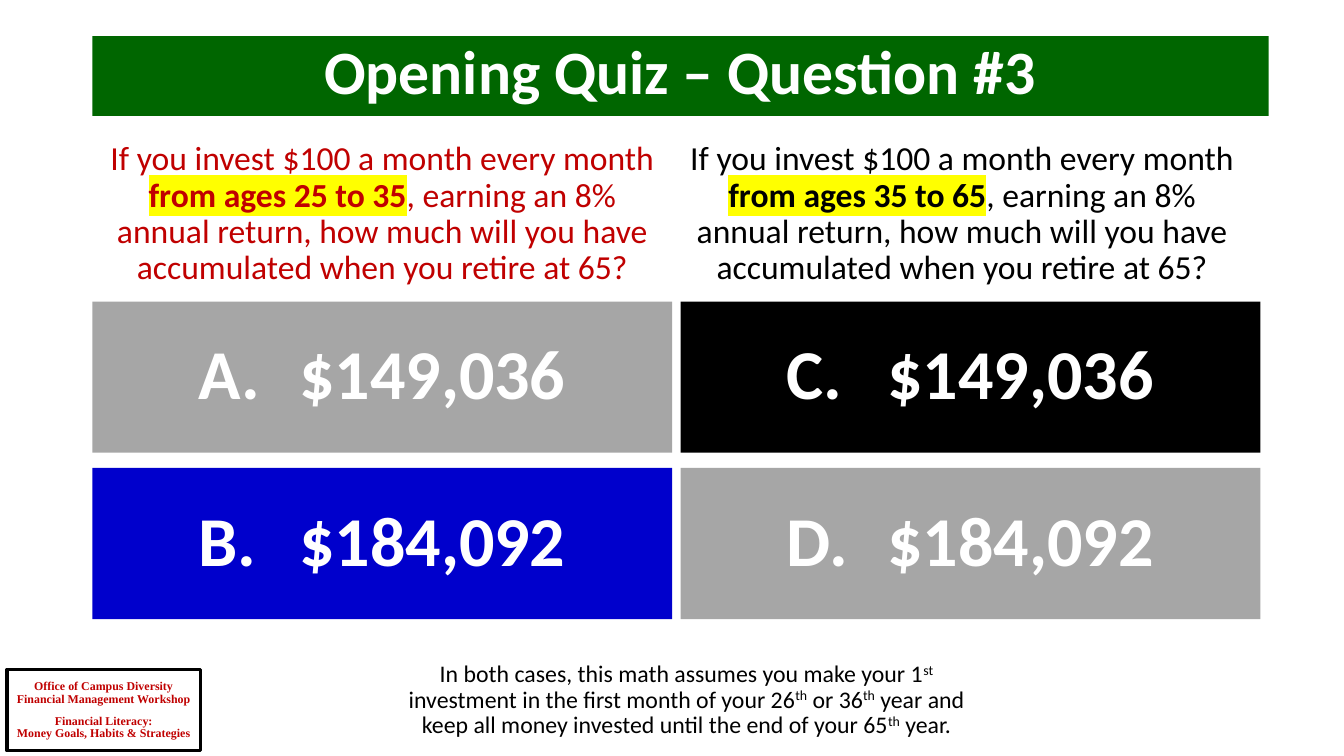
"""Build a quiz slide that compares early and late investing."""
from dataclasses import dataclass

from lxml import etree
from pptx import Presentation
from pptx.dml.color import RGBColor
from pptx.enum.shapes import MSO_SHAPE
from pptx.enum.text import MSO_ANCHOR, PP_ALIGN
from pptx.oxml.ns import qn
from pptx.util import Inches, Pt

RECTANGLE = MSO_SHAPE.RECTANGLE
CENTER = PP_ALIGN.CENTER
TOP, MIDDLE = MSO_ANCHOR.TOP, MSO_ANCHOR.MIDDLE
UNITS_PER_INCH = 12


@dataclass(frozen=True)
class Theme:
    """Colours, fonts and type sizes of the slide."""
    green: str = "006600"
    red: str = "C00000"
    blue: str = "0000CC"
    gray: str = "A6A6A6"
    black: str = "000000"
    white: str = "FFFFFF"
    yellow: str = "FFFF00"
    body_font: str = "Calibri"
    label_font: str = "Times New Roman"
    title_size: float = 44
    answer_size: float = 50
    question_size: float = 24
    note_size: float = 17
    label_size: float = 8.5


class QuizSlide:
    """Draws on one slide with a grid of 160 columns by 90 rows."""

    def __init__(self, slide, theme):
        self.slide = slide
        self.theme = theme

    def place(self, col, row, cols, rows):
        """Turn grid units into lengths."""
        return [Inches(units / UNITS_PER_INCH) for units in (col, row, cols, rows)]

    def fill_paragraph(self, frame, runs, size, color, bold=False, font=None, before=0):
        """Fill the last paragraph with (text, style) runs."""
        paragraph = frame.paragraphs[-1]
        paragraph.alignment = CENTER
        paragraph.line_spacing = 0.9
        paragraph.space_before = Pt(before)
        paragraph.font.name = font or self.theme.body_font
        paragraph.font.size = Pt(size)
        paragraph.font.bold = bold
        paragraph.font.color.rgb = RGBColor.from_string(color)
        for text, style in runs:
            run = paragraph.add_run()
            run.text = text
            if style == "marked":
                run.font.bold = True
                self.highlight(run, color)
            elif style == "raised":
                run.font._element.set("baseline", "30000")

    def highlight(self, run, color):
        """Put a yellow marker behind a run."""
        run.font.color.rgb = RGBColor.from_string(color)
        marker = etree.SubElement(run.font._element, qn("a:highlight"))
        etree.SubElement(marker, qn("a:srgbClr"), val=self.theme.yellow)

    def panel(self, area, fill=None, outline=None, anchor=MIDDLE):
        """Add a rectangle and return its text frame."""
        shape = self.slide.shapes.add_shape(RECTANGLE, *self.place(*area))
        shape.shadow.inherit = False
        if fill:
            shape.fill.solid()
            shape.fill.fore_color.rgb = RGBColor.from_string(fill)
        else:
            shape.fill.background()
        if outline:
            shape.line.color.rgb = RGBColor.from_string(outline)
            shape.line.width = Pt(2.25)
        else:
            shape.line.fill.background()
        shape.text_frame.vertical_anchor = anchor
        return shape.text_frame

    def text(self, area, runs, size, color):
        """Add a wrapping text box."""
        frame = self.slide.shapes.add_textbox(*self.place(*area)).text_frame
        frame.word_wrap = True
        frame.vertical_anchor = TOP
        self.fill_paragraph(frame, runs, size, color)

    def title(self, area, wording):
        """Add the title bar."""
        frame = self.panel(area, self.theme.green, anchor=TOP)
        self.fill_paragraph(frame, [(wording, None)], self.theme.title_size,
                            self.theme.white, bold=True)

    def answer(self, area, letter, amount, fill):
        """Add one answer panel."""
        self.fill_paragraph(self.panel(area, fill), [(f"{letter}.\t{amount}", None)],
                            self.theme.answer_size, self.theme.white, bold=True)

    def question(self, area, ages, color):
        """Add one question with its ages highlighted."""
        runs = [
            ("If you invest $100 a month every month ", None),
            (f"from ages {ages}", "marked"),
            (", earning an 8% annual return, how much will you have "
             "accumulated when you retire at 65?", None),
        ]
        self.text(area, runs, self.theme.question_size, color)

    def workshop_label(self, area, groups):
        """Add the outlined label, with a gap between groups of lines."""
        frame = self.panel(area, outline=self.theme.black)
        frame.word_wrap = False
        for group_index, lines in enumerate(groups):
            for line_index, line in enumerate(lines):
                if group_index or line_index:
                    frame.add_paragraph()
                gap = 6.5 if group_index and not line_index else 0
                self.fill_paragraph(frame, [(line, None)], self.theme.label_size,
                                    self.theme.red, True, self.theme.label_font, gap)


def main():
    """Compose the slide and save it."""
    deck = Presentation()
    deck.slide_width, deck.slide_height = Inches(13.33), Inches(7.5)
    theme = Theme()
    quiz = QuizSlide(deck.slides.add_slide(deck.slide_layouts[6]), theme)

    left, width = 11, 69
    answer_top, answer_height, answer_pitch = 35.9, 18, 19.8

    quiz.workshop_label((0.84, 79.7, 23, 9.7), [
        ["Office of Campus Diversity", "Financial Management Workshop"],
        ["Financial Literacy:", "Money Goals, Habits & Strategies"],
    ])
    quiz.title((left, 4.3, 140, 9.5), "Opening Quiz – Question #3")

    amounts = ["$149,036", "$184,092"]
    cases = [
        ("25 to 35", theme.red, "AB", [theme.gray, theme.blue]),
        ("35 to 65", theme.black, "CD", [theme.black, theme.gray]),
    ]
    for column, (ages, color, letters, fills) in enumerate(cases):
        quiz.question((left + column * width, 16.3, width, 19), ages, color)
        answer_left = left + column * (width + 1)
        for row, (letter, amount, fill) in enumerate(zip(letters, amounts, fills)):
            area = (answer_left, answer_top + row * answer_pitch, width, answer_height)
            quiz.answer(area, letter, amount, fill)

    assumption = [
        ("In both cases, this math assumes you make your 1", None),
        ("st", "raised"),
        (" investment in the first month of your 26", None),
        ("th", "raised"),
        (" or 36", None),
        ("th", "raised"),
        (" year and keep all money invested until the end of your 65", None),
        ("th", "raised"),
        (" year.", None),
    ]
    quiz.text((47.2, 78.2, width, 7), assumption, theme.note_size, theme.black)
    deck.save("out.pptx")


if __name__ == "__main__":
    main()
